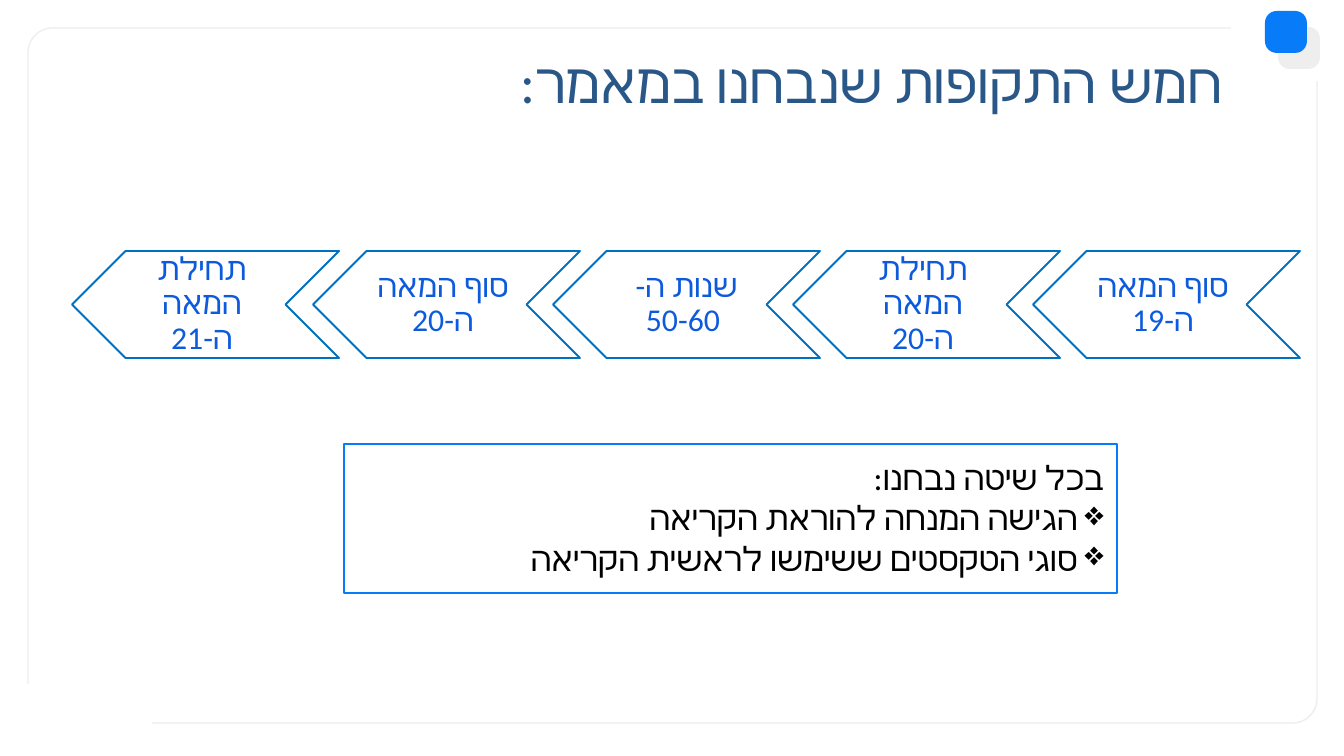
from lxml.etree import SubElement
from pptx import Presentation
from pptx.dml.color import RGBColor
from pptx.enum.shapes import MSO_SHAPE
from pptx.enum.text import MSO_ANCHOR, PP_ALIGN
from pptx.oxml.ns import qn
from pptx.util import Pt

PX = 914400 / 134.4


def add_box(kind, x, y, w, h, fill=None, line=None, weight=0.75):
    s = slide.shapes.add_shape(kind, *[round(v * PX) for v in (x, y, w, h)])
    s.shadow.inherit = False
    for target, color in ((s.fill, fill), (s.line.fill, line)):
        if color:
            target.solid()
            target.fore_color.rgb = RGBColor.from_string(color)
        else:
            target.background()
    if line:
        s.line.width = Pt(weight)
    return s


def set_text(s, lines, size, color, align, anchor, margins):
    tf = s.text_frame
    tf.word_wrap = True
    tf.vertical_anchor = anchor
    tf.margin_left, tf.margin_top, tf.margin_right, tf.margin_bottom = [
        round(m * PX) for m in margins]
    for i, line in enumerate(lines):
        p = tf.paragraphs[0] if i == 0 else tf.add_paragraph()
        p.text = line
        p.alignment = align
        p._p.get_or_add_pPr().set("rtl", "1")
        for r in p.runs:
            r.font.size = Pt(size)
            r.font.name = "Calibri"
            r.font.color.rgb = RGBColor.from_string(color)
            SubElement(r._r.get_or_add_rPr(), qn("a:cs")).set("typeface", "Calibri")
    return tf


prs = Presentation()
prs.slide_width = round(1344 * PX)
prs.slide_height = round(756 * PX)
slide = prs.slides.add_slide(prs.slide_layouts[6])

frame = add_box(MSO_SHAPE.ROUNDED_RECTANGLE, 28, 28, 1289, 695, line="EEEEEE")
frame.adjustments[0] = 0.035
add_box(MSO_SHAPE.RECTANGLE, 1231, 4, 107, 77, fill="FFFFFF")
for x, y, color in ((1278, 27, "EEEEEE"), (1265, 11, "087BF8")):
    s = add_box(MSO_SHAPE.ROUNDED_RECTANGLE, x, y, 42, 42, fill=color)
    s.adjustments[0] = 0.28
add_box(MSO_SHAPE.RECTANGLE, 8, 684, 144, 72, fill="FFFFFF")

title = slide.shapes.add_textbox(*[round(v * PX) for v in (380, 35, 856, 85)])
set_text(title, ["חמש התקופות שנבחנו במאמר:"], 30, "285788",
         PP_ALIGN.RIGHT, MSO_ANCHOR.TOP, (13, 13, 13, 13))

criteria = add_box(MSO_SHAPE.RECTANGLE, 344, 444, 773, 149, line="087BF8")
tf = set_text(criteria, ["בכל שיטה נבחנו:",
                         "הגישה המנחה להוראת הקריאה",
                         "סוגי הטקסטים ששימשו לראשית הקריאה"],
              18, "000000", PP_ALIGN.RIGHT, MSO_ANCHOR.TOP, (13, 13, 13, 13))
for p in tf.paragraphs[1:]:
    pPr = p._p.get_or_add_pPr()
    indent = round(26 * PX)
    pPr.set("marL", str(indent))
    pPr.set("indent", str(-indent))
    SubElement(SubElement(pPr, qn("a:buClr")), qn("a:srgbClr")).set("val", "000000")
    SubElement(pPr, qn("a:buChar")).set("char", "❖")

periods = ["סוף המאה ה-19", "תחילת המאה ה-20", "שנות ה- \n50-60",
           "סוף המאה ה-20", "תחילת המאה ה-21"]
for i, period in enumerate(periods):
    x = 1033 - i * 961 // 4
    chevron = add_box(MSO_SHAPE.CHEVRON, x, 251, 267, 107, "FFFFFF", "0070C0", 1)
    chevron.rotation = 180
    label = slide.shapes.add_textbox(*[round(v * PX) for v in (x + 53, 251, 160, 107)])
    tf = set_text(label, [period], 17, "0D5BDC",
                  PP_ALIGN.CENTER, MSO_ANCHOR.MIDDLE, (3, 3, 9, 3))
    tf.paragraphs[0].line_spacing = 0.9

prs.save("out.pptx")
